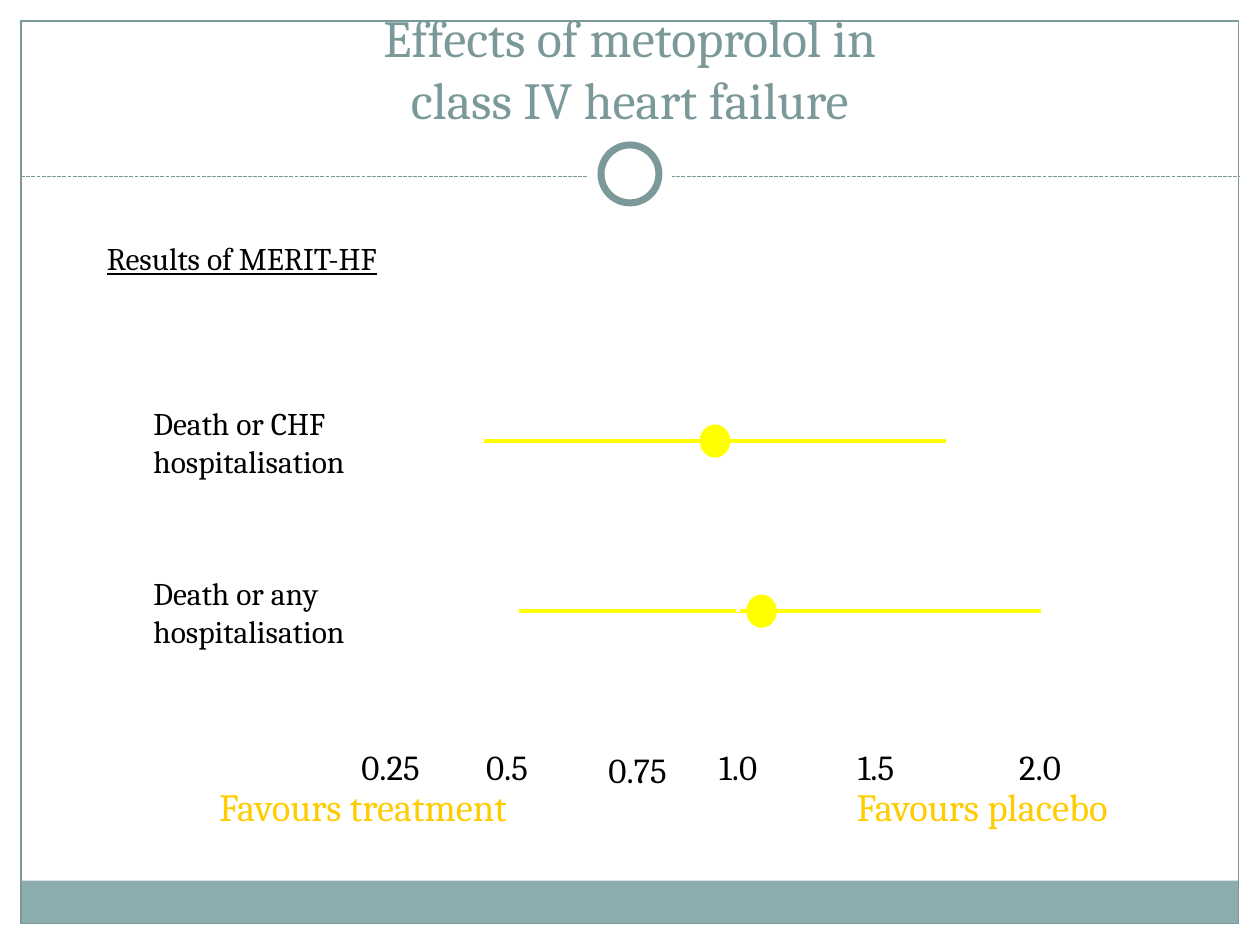
"""Build a forest-plot slide on metoprolol in class IV heart failure."""
from lxml import etree
from pptx import Presentation
from pptx.dml.color import RGBColor
from pptx.enum.dml import MSO_LINE
from pptx.enum.shapes import MSO_CONNECTOR, MSO_SHAPE
from pptx.enum.text import MSO_ANCHOR, PP_ALIGN
from pptx.oxml.ns import qn
from pptx.util import Pt

STRAIGHT = MSO_CONNECTOR.STRAIGHT
RECTANGLE, OVAL = MSO_SHAPE.RECTANGLE, MSO_SHAPE.OVAL
DASH, DOT = MSO_LINE.SQUARE_DOT, MSO_LINE.ROUND_DOT
TOP, BOTTOM = MSO_ANCHOR.TOP, MSO_ANCHOR.BOTTOM
LEFT, CENTER = PP_ALIGN.LEFT, PP_ALIGN.CENTER

FONT = "Cambria"
COLORS = {"frame": "7C999A", "band": "8CADAE", "white": "FFFFFF",
          "black": "000000", "estimate": "FFFF00", "favours": "FFCC00"}

TITLE = "Effects of metoprolol in\vclass IV heart failure"
SUBTITLE = "Results of MERIT-HF"
OUTCOMES = [
    ("Death or CHF\nhospitalisation", 276.5, 408.6, 540.7),
    ("Death or any\nhospitalisation", 296.6, 435.2, 594.7),
]
SCALE = [("0.25", 199.4, 422.6, 53.3), ("0.5", 270.7, 422.6, 42.5),
         ("0.75", 340.6, 424.1, 53.3), ("1.0", 403.9, 422.6, 42.5),
         ("1.5", 483.1, 422.6, 42.5), ("2.0", 575.3, 422.6, 42.5)]
DIRECTIONS = [("Favours treatment", 118.1, 206.6), ("Favours placebo", 482.4, 190.1)]

WIDTH, HEIGHT, MARGIN = 720, 540, 12.1
DIVIDER_Y, RING_Y = 100.8, 99.4
FIRST_ROW, ROW_PITCH = 252, 97.2
NO_EFFECT_X = 421.9


def rgb(name):
    return RGBColor.from_string(COLORS[name])


def add_text(slide, text, left, top, width, height, size, color="black",
             align=LEFT, anchor=TOP, underline=None):
    box = slide.shapes.add_textbox(Pt(left), Pt(top), Pt(width), Pt(height))
    frame = box.text_frame
    frame.word_wrap = True
    frame.vertical_anchor = anchor
    frame.text = text
    for paragraph in frame.paragraphs:
        paragraph.alignment = align
        for run in paragraph.runs:
            run.font.name = FONT
            run.font.size = Pt(size)
            run.font.underline = underline
            run.font.color.rgb = rgb(color)


def add_line(slide, x1, y1, x2, y2, color, weight, dash=None):
    line = slide.shapes.add_connector(STRAIGHT, Pt(x1), Pt(y1), Pt(x2), Pt(y2))
    line.line.color.rgb = rgb(color)
    line.line.width = Pt(weight)
    line.line.dash_style = dash
    etree.SubElement(line._element.spPr, qn("a:effectLst"))


def add_figure(slide, preset, left, top, width, height, fill=None, outline=None, weight=1):
    figure = slide.shapes.add_shape(preset, Pt(left), Pt(top), Pt(width), Pt(height))
    figure.shadow.inherit = False
    if fill:
        figure.fill.solid()
        figure.fill.fore_color.rgb = rgb(fill)
    else:
        figure.fill.background()
    if outline:
        figure.line.color.rgb = rgb(outline)
        figure.line.width = Pt(weight)
    else:
        figure.line.fill.background()


def add_circle(slide, x, y, width, height, *style):
    add_figure(slide, OVAL, x - width / 2, y - height / 2, width, height, *style)


def add_backdrop(slide):
    inner = WIDTH - 2 * MARGIN
    add_figure(slide, RECTANGLE, MARGIN, 503.3, inner, 24.5, "band")
    add_figure(slide, RECTANGLE, MARGIN, MARGIN, inner, HEIGHT - 2 * MARGIN,
               None, "frame", 0.75)
    add_line(slide, MARGIN, DIVIDER_Y, WIDTH - MARGIN, DIVIDER_Y, "frame", 0.75, DASH)
    add_circle(slide, WIDTH / 2, RING_Y, 48, 48, "white")
    add_circle(slide, WIDTH / 2, RING_Y, 33.1, 33.1, "white", "frame", 4)


def add_forest_plot(slide):
    for row, (outcome, low, estimate, high) in enumerate(OUTCOMES):
        y = FIRST_ROW + row * ROW_PITCH
        add_text(slide, outcome, 80.6, y - 24.5, 183.6, 64.8, 18)
        add_line(slide, low, y, high, y, "estimate", 2.25)
        add_circle(slide, estimate, y, 16.5, 18, "estimate", "estimate")
    add_line(slide, NO_EFFECT_X, 195.1, NO_EFFECT_X, 420.5, "white", 2.25, DOT)
    for value, left, top, width in SCALE:
        add_text(slide, value, left, top, width, 31, 20)
    for direction, left, width in DIRECTIONS:
        add_text(slide, direction, left, 444.2, width, 33.8, 22, "favours")


def main():
    deck = Presentation()
    deck.slide_width, deck.slide_height = Pt(WIDTH), Pt(HEIGHT)
    slide = deck.slides.add_slide(deck.slide_layouts[6])
    add_backdrop(slide)
    add_text(slide, TITLE, 24, 18, 672, 59.8, 29.7, "frame", CENTER, BOTTOM)
    add_text(slide, SUBTITLE, 54, 133.2, 338.4, 36, 18, underline=True)
    add_forest_plot(slide)
    deck.save("out.pptx")


if __name__ == "__main__":
    main()
